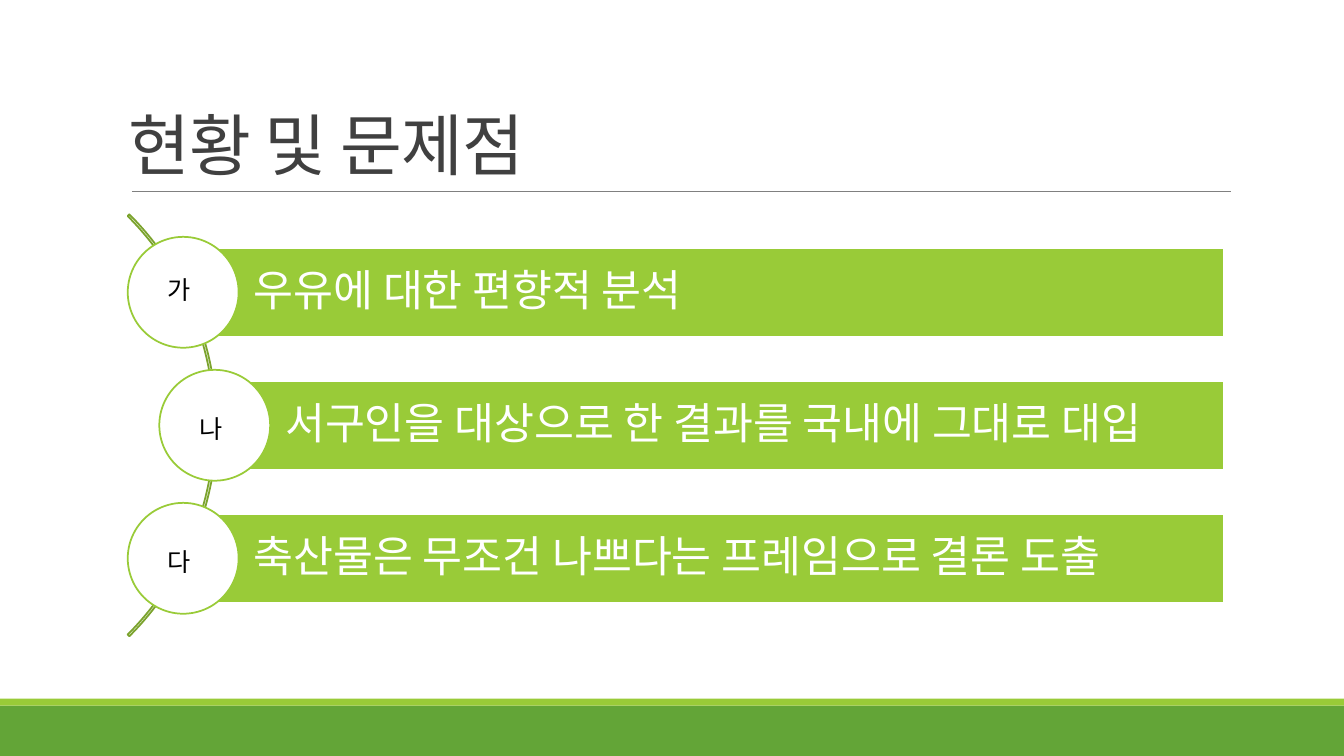
from math import sqrt

from pptx import Presentation
from pptx.dml.color import RGBColor
from pptx.enum.shapes import MSO_CONNECTOR, MSO_SHAPE
from pptx.enum.text import MSO_ANCHOR, PP_ALIGN
from pptx.oxml.ns import qn
from pptx.util import Pt
from lxml.etree import SubElement

LIME = RGBColor(0x99, 0xCB, 0x38)
GREEN = RGBColor(0x63, 0xA5, 0x37)
ARC_GREEN = RGBColor(0x7B, 0xA3, 0x2D)
RULE_GRAY = RGBColor(0x80, 0x80, 0x80)
TITLE_GRAY = RGBColor(0x40, 0x40, 0x40)
WHITE = RGBColor(0xFF, 0xFF, 0xFF)
BLACK = RGBColor(0, 0, 0)
FONT = "Calibri"
SLIDE_W, SLIDE_H = 960, 540
PROBLEMS = [
    ("가", "우유에 대한 편향적 분석", 15),
    ("나", "서구인을 대상으로 한 결과를 국내에 그대로 대입", 19.5),
    ("다", "축산물은 무조건 나쁘다는 프레임으로 결론 도출", 19.5),
]


def add_box(s, kind, x, y, w, h, fill=None, line=None):
    """Add a flat preset shape with an optional fill and outline."""
    sp = s.shapes.add_shape(kind, Pt(x), Pt(y), Pt(w), Pt(h))
    sp.shadow.inherit = False
    if fill is None:
        sp.fill.background()
    else:
        sp.fill.solid()
        sp.fill.fore_color.rgb = fill
    if line is None:
        sp.line.fill.background()
    else:
        sp.line.color.rgb = line
        sp.line.width = Pt(1.25)
    return sp


def set_text(tf, text, size, color):
    """Write one left-aligned paragraph and return it."""
    p = tf.paragraphs[0]
    p.text = text
    p.alignment = PP_ALIGN.LEFT
    p.font.size = Pt(size)
    p.font.name = FONT
    p.font.color.rgb = color
    return p


def add_footer_bands(s, y, w, h):
    """Draw the green band and the lime strip above it."""
    strip = 5
    add_box(s, MSO_SHAPE.RECTANGLE, 0, y + strip, w, h - strip, GREEN)
    add_box(s, MSO_SHAPE.RECTANGLE, 0, y, w, strip, LIME)


def add_title(s, x, y, w, h):
    """Place the title and the thin rule under it."""
    title = s.shapes.title
    title.left, title.top, title.width, title.height = Pt(x), Pt(y), Pt(w), Pt(h)
    tf = title.text_frame
    tf.word_wrap = True
    tf.vertical_anchor = MSO_ANCHOR.BOTTOM
    p = set_text(tf, "현황 및 문제점", 48, TITLE_GRAY)
    p.line_spacing = 0.85
    p.runs[0]._r.get_or_add_rPr().set("spc", "-50")
    rule_y = Pt(y + h + 1.5)
    rule = s.shapes.add_connector(
        MSO_CONNECTOR.STRAIGHT, Pt(x + 10), rule_y, Pt(x + w + 3), rule_y)
    rule.line.color.rgb = RULE_GRAY
    rule.line.width = Pt(0.5)
    SubElement(rule._element.spPr, qn("a:effectLst"))


def add_problem(s, x, y, w, h, label, text, label_drop):
    """Draw one bar with a lettered circle centred on its left end."""
    d = 79.2
    bar = add_box(s, MSO_SHAPE.RECTANGLE, x, y, w, h, LIME, WHITE)
    tf = bar.text_frame
    tf.word_wrap = True
    tf.vertical_anchor = MSO_ANCHOR.MIDDLE
    tf.margin_left = Pt(50.3)
    tf.margin_right = tf.margin_top = tf.margin_bottom = Pt(6.3)
    set_text(tf, text, 31, WHITE).line_spacing = 0.9
    add_box(s, MSO_SHAPE.OVAL, x - d / 2, y + (h - d) / 2, d, d, WHITE, LIME)
    tb = s.shapes.add_textbox(Pt(x - 18), Pt(y + label_drop), Pt(111.6), Pt(29))
    tb.text_frame.word_wrap = True
    set_text(tb.text_frame, label, 18, BLACK)


def add_problem_list(s, x, y, w, h):
    """Draw the arc and space the bars evenly along it."""
    d, radius, bar_h, pitch = 426.2, 211.7, 63.4, 95
    arc_x, mid_y = x - 149, y + h / 2
    arc = add_box(s, MSO_SHAPE.BLOCK_ARC, arc_x - d / 2, mid_y - d / 2, d, d,
                  line=ARC_GREEN)
    for i, value in enumerate((189, 27, 0.004)):
        arc.adjustments[i] = value
    for i, (label, text, drop) in enumerate(PROBLEMS):
        dy = (i - 1) * pitch
        bar_x = arc_x + sqrt(radius ** 2 - dy ** 2)
        add_problem(s, bar_x, mid_y + dy - bar_h / 2, x + w - bar_x, bar_h,
                    label, text, drop)


def main():
    """Build and save the slide."""
    prs = Presentation()
    prs.slide_width, prs.slide_height = Pt(SLIDE_W), Pt(SLIDE_H)
    s = prs.slides.add_slide(prs.slide_layouts[5])
    add_footer_bands(s, 499, SLIDE_W, SLIDE_H - 499)
    add_title(s, 84.3, 20.6, 792, 114.5)
    add_problem_list(s, 90.7, 152, 783.3, 303.6)
    prs.save("out.pptx")


if __name__ == "__main__":
    main()
